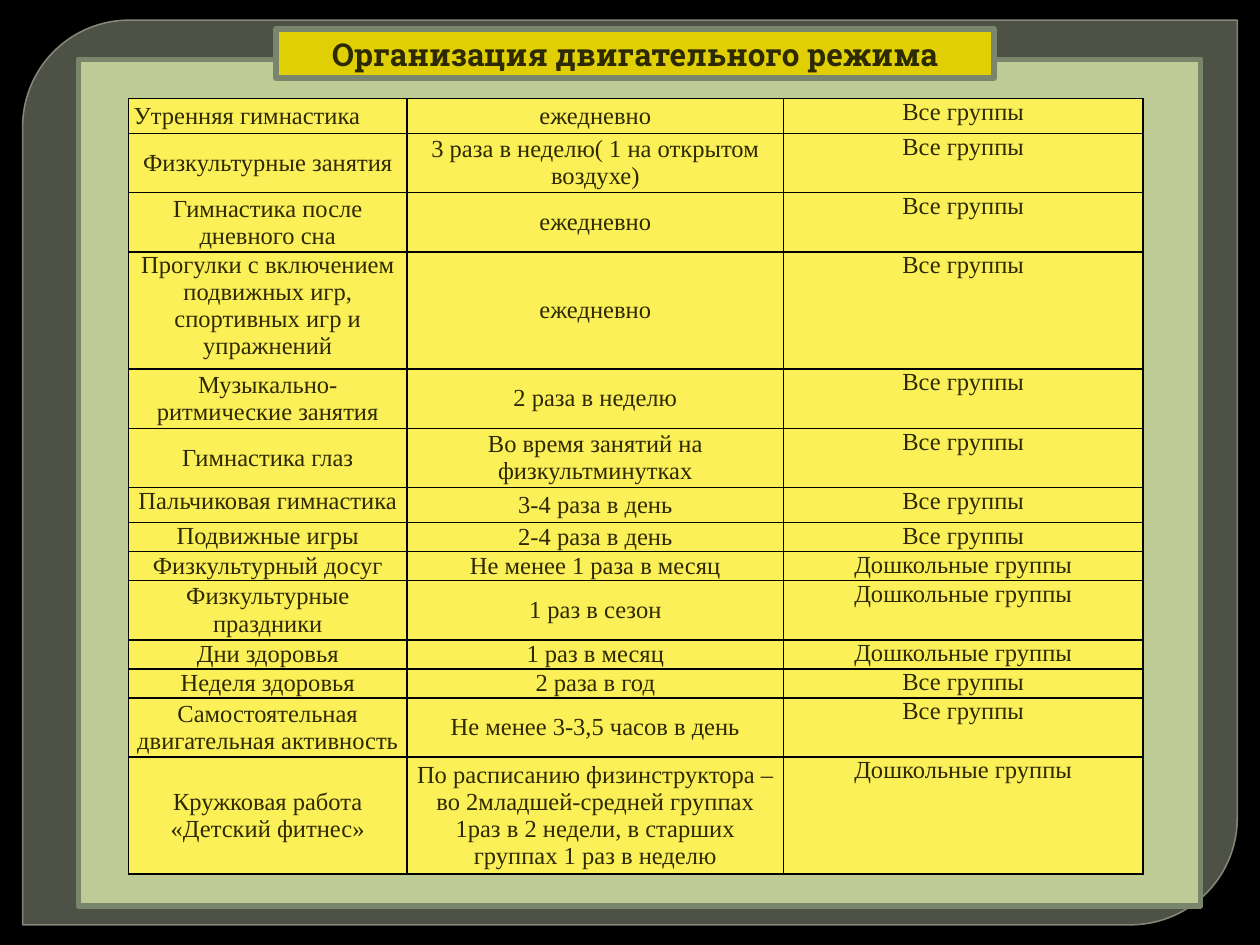
from dataclasses import dataclass

from pptx import Presentation
from pptx.dml.color import RGBColor
from pptx.enum.shapes import MSO_SHAPE as Shape
from pptx.enum.text import MSO_ANCHOR as Anchor, PP_ALIGN as Align
from pptx.oxml import parse_xml
from pptx.oxml.ns import nsdecls, qn
from pptx.util import Inches, Pt


@dataclass(frozen=True)
class Theme:
    backdrop: str = "000000"
    frame: str = "787D6B"
    frame_line: str = "8F9483"
    panel: str = "BECB95"
    panel_line: str = "7A866C"
    banner: str = "DFCF04"
    cell: str = "FCF059"
    border: str = "000000"
    ink: str = "2D2901"
    title_font: str = "Roboto Slab"
    body_font: str = "Times New Roman"
    title_size: int = 18
    body_size: int = 14
    border_width: int = 1


ALL = "Все группы"
PRESCHOOL = "Дошкольные группы"
DAILY = "ежедневно"
SHORT, LINE, DOUBLE, TALL = 0.28, 0.23, 0.47, 0.93
COLUMNS = (2.21, 2.99, 2.85)
ROWS = (
    (SHORT, "Утренняя гимнастика", DAILY, ALL),
    (DOUBLE, "Физкультурные занятия", "3 раза в неделю( 1 на открытом воздухе)", ALL),
    (DOUBLE, "Гимнастика после дневного сна", DAILY, ALL),
    (TALL, "Прогулки с включением подвижных игр, спортивных игр и упражнений", DAILY, ALL),
    (DOUBLE, "Музыкально-ритмические занятия", "2 раза в неделю", ALL),
    (DOUBLE, "Гимнастика глаз", "Во время занятий на физкультминутках", ALL),
    (SHORT, "Пальчиковая гимнастика", "3-4 раза в день", ALL),
    (LINE, "Подвижные игры", "2-4 раза в день", ALL),
    (LINE, "Физкультурный досуг", "Не менее 1 раза в месяц", PRESCHOOL),
    (DOUBLE, "Физкультурные праздники", "1 раз в сезон", PRESCHOOL),
    (LINE, "Дни здоровья", "1 раз в месяц", PRESCHOOL),
    (LINE, "Неделя здоровья", "2 раза в год", ALL),
    (DOUBLE, "Самостоятельная двигательная активность", "Не менее 3-3,5 часов в день", ALL),
    (TALL, "Кружковая работа «Детский фитнес»",
     "По расписанию физинструктора – во 2младшей-средней группах "
     "1раз в 2 недели, в старших группах 1 раз в неделю", PRESCHOOL),
)
TOP_ANCHORED_ACTIVITIES = (3, 6, 7)


def write_text(frame, text, *, font, size, color, bold=False, align=Align.CENTER):
    frame.word_wrap = True
    para = frame.paragraphs[0]
    para.alignment = align
    span = para.add_run()
    span.text = text
    span.font.name = font
    span.font.size = Pt(size)
    span.font.bold = bold
    span.font.color.rgb = RGBColor.from_string(color)


def set_opacity(fill, percent):
    color = fill._xPr.find(qn("a:solidFill"))[0]
    color.append(parse_xml(f'<a:alpha {nsdecls("a")} val="{percent * 1000}"/>'))


class SlideBuilder:
    def __init__(self, slide, theme):
        self.slide = slide
        self.theme = theme

    def background(self):
        fill = self.slide.background.fill
        fill.solid()
        fill.fore_color.rgb = RGBColor.from_string(self.theme.backdrop)

    def shape(self, kind, left, top, width, height, fill, line, line_width):
        box = self.slide.shapes.add_shape(
            kind, Inches(left), Inches(top), Inches(width), Inches(height))
        box.shadow.inherit = False
        box.fill.solid()
        box.fill.fore_color.rgb = RGBColor.from_string(fill)
        box.line.color.rgb = RGBColor.from_string(line)
        box.line.width = Pt(line_width)
        return box

    def frame(self):
        box = self.shape(Shape.ROUND_2_DIAG_RECTANGLE, 0.18, 0.16, 9.64, 7.18,
                         self.theme.frame, self.theme.frame_line, 0.87)
        box.adjustments[0] = 0.118
        box.adjustments[1] = 0
        set_opacity(box.fill, 65)
        set_opacity(box.line.fill, 88)

    def panel(self, left, top, width, height, fill):
        return self.shape(Shape.RECTANGLE, left, top, width, height,
                          fill, self.theme.panel_line, 3)

    def title(self, text):
        box = self.panel(2.19, 0.23, 5.7, 0.39, self.theme.banner)
        box.text_frame.vertical_anchor = Anchor.MIDDLE
        write_text(box.text_frame, text, font=self.theme.title_font,
                   size=self.theme.title_size, color=self.theme.ink, bold=True)

    def cell(self, cell, text, anchor, align):
        theme = self.theme
        properties = cell._tc.get_or_add_tcPr()
        for side in "LRTB":
            properties.append(parse_xml(
                f'<a:ln{side} {nsdecls("a")} w="{Pt(theme.border_width)}"><a:solidFill>'
                f'<a:srgbClr val="{theme.border}"/></a:solidFill></a:ln{side}>'))
        cell.fill.solid()
        cell.fill.fore_color.rgb = RGBColor.from_string(theme.cell)
        cell.margin_left = cell.margin_right = Inches(0.04)
        cell.margin_top = cell.margin_bottom = 0
        cell.vertical_anchor = anchor
        write_text(cell.text_frame, text, font=theme.body_font,
                   size=theme.body_size, color=theme.ink, align=align)

    def table(self, left, top, columns, rows):
        table = self.slide.shapes.add_table(
            len(rows), len(columns), Inches(left), Inches(top),
            Inches(sum(columns)), Inches(sum(row[0] for row in rows))).table
        table.first_row = table.horz_banding = False
        for column, width in zip(table.columns, columns):
            column.width = Inches(width)
        for row_index, (height, *texts) in enumerate(rows):
            table.rows[row_index].height = Inches(height)
            for column_index, text in enumerate(texts):
                at_top = column_index == 2 or (
                    column_index == 0 and row_index in TOP_ANCHORED_ACTIVITIES)
                first = row_index == column_index == 0
                self.cell(table.cell(row_index, column_index), text,
                          Anchor.TOP if at_top else Anchor.MIDDLE,
                          Align.LEFT if first else Align.CENTER)


def main():
    deck = Presentation()
    deck.slide_width, deck.slide_height = Inches(10), Inches(7.5)
    theme = Theme()
    page = SlideBuilder(deck.slides.add_slide(deck.slide_layouts[6]), theme)
    page.background()
    page.frame()
    page.panel(0.62, 0.47, 8.91, 6.72, theme.panel)
    page.table(1.02, 0.78, COLUMNS, ROWS)
    page.title("Организация двигательного режима")
    deck.save("out.pptx")


if __name__ == "__main__":
    main()
